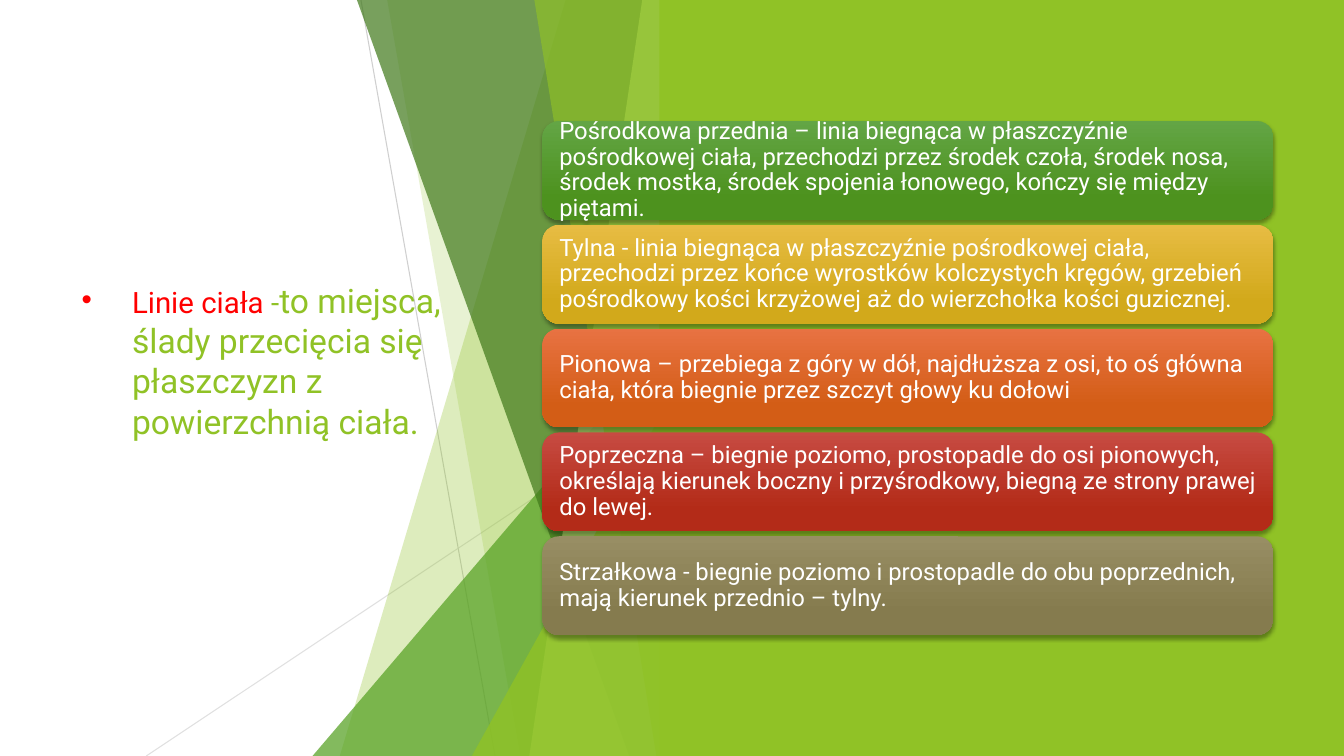
from dataclasses import dataclass

from lxml import etree
from pptx import Presentation
from pptx.dml.color import RGBColor
from pptx.enum.shapes import MSO_CONNECTOR, MSO_SHAPE
from pptx.enum.text import MSO_ANCHOR, MSO_AUTO_SIZE, PP_ALIGN
from pptx.oxml.ns import qn
from pptx.util import Inches, Pt

STRAIGHT = MSO_CONNECTOR.STRAIGHT
RECTANGLE, ROUNDED, TRIANGLE = (
    MSO_SHAPE.RECTANGLE, MSO_SHAPE.ROUNDED_RECTANGLE, MSO_SHAPE.ISOSCELES_TRIANGLE)
MIDDLE, LEFT, NO_FIT = MSO_ANCHOR.MIDDLE, PP_ALIGN.LEFT, MSO_AUTO_SIZE.NONE

WIDTH, HEIGHT = 13.33, 7.5
FACET_EDGE = 6.66
PANEL_LEFT = 6.54
CARD_LEFT, CARD_TOP, CARD_WIDTH, CARD_HEIGHT = 5.38, 1.2, 7.25, 0.98
CARD_PITCH = 1.03
CARD_INSET = 0.12


@dataclass(frozen=True)
class Theme:
    """Colours, font and type sizes of the slide."""
    font: str = "Roboto"
    lime: str = "90C226"
    leaf: str = "54A021"
    forest: str = "3F7819"
    pale: str = "C0E474"
    red: str = "FF0000"
    white: str = "FFFFFF"
    grey: str = "BFBFBF"
    silver: str = "D9D9D9"
    shadow: str = "000000"
    term_size: float = 21
    title_size: float = 24
    card_size: float = 17


THEME = Theme()

TITLE_SPANS = [
    ("Linie ciała", THEME.term_size, THEME.red),
    (" -", THEME.term_size, THEME.lime),
    ("to miejsca, ślady przecięcia się płaszczyzn z powierzchnią ciała.",
     THEME.title_size, THEME.lime),
]

RAYS = [
    ((3.58, 0), (4.91, HEIGHT), THEME.grey, 75),
    ((FACET_EDGE, 4.03), (1.45, HEIGHT), THEME.silver, 80),
]

BACK_FACETS = [(5.61, 3.37, THEME.lime, 30), (3.84, 5.16, THEME.lime, 20)]
FRONT_FACETS = [
    (3.54, 6.24, THEME.forest, 70),
    (6.37, 5.25, THEME.pale, 70),
    (5.3, 6.51, THEME.lime, 65),
]

CARDS = [
    ("Pośrodkowa przednia – linia biegnąca w płaszczyźnie pośrodkowej ciała, "
     "przechodzi przez środek czoła, środek nosa, środek mostka, środek spojenia "
     "łonowego, kończy się między piętami.", "63A545", "4D921E"),
    ("Tylna - linia biegnąca w płaszczyźnie pośrodkowej ciała, przechodzi przez "
     "końce wyrostków kolczystych kręgów, grzebień pośrodkowy kości krzyżowej aż "
     "do wierzchołka kości guzicznej.", "E7BC43", "D2A91B"),
    ("Pionowa – przebiega z góry w dół, najdłuższa z osi, to oś główna ciała, "
     "która biegnie przez szczyt głowy ku dołowi", "E87242", "D35D16"),
    ("Poprzeczna – biegnie poziomo, prostopadle do osi pionowych, określają "
     "kierunek boczny i przyśrodkowy, biegną ze strony prawej do lewej.",
     "C74B42", "B32B18"),
    ("Strzałkowa - biegnie poziomo i prostopadle do obu poprzednich, mają "
     "kierunek przednio – tylny.", "988E64", "857B4E"),
]


def set_alpha(parent, percent):
    """Give the first plain colour under an element its opacity."""
    colour = next(parent.iter(qn("a:srgbClr")))
    etree.SubElement(colour, qn("a:alpha"), val=str(percent * 1000))


def add_span(para, text, size, colour):
    """Add one formatted run to a paragraph."""
    span = para.add_run()
    span.text = text
    span.font.name = THEME.font
    span.font.size = Pt(size)
    span.font.color.rgb = RGBColor.from_string(colour)


def paint(shape, colour, opacity=100):
    """Fill a shape flatly, with neither outline nor shadow."""
    shape.shadow.inherit = False
    shape.line.fill.background()
    shape.fill.solid()
    shape.fill.fore_color.rgb = RGBColor.from_string(colour)
    if opacity < 100:
        set_alpha(shape.fill._xPr, opacity)


def add_title(page):
    """Place the bulleted definition in the title placeholder."""
    box = page.shapes.title
    box.left, box.top, box.width, box.height = map(Inches, (0.71, 1.51, 3.88, 4.48))
    frame = box.text_frame
    frame.word_wrap = True
    frame.auto_size = NO_FIT
    frame.vertical_anchor = MIDDLE
    frame.margin_bottom = Inches(0.4)
    para = frame.paragraphs[0]
    para.alignment = LEFT
    props = para._p.get_or_add_pPr()
    props.set("marL", str(Inches(0.5)))
    props.set("indent", str(-Inches(0.5)))
    etree.SubElement(props, qn("a:buFont"), typeface="Arial")
    etree.SubElement(props, qn("a:buChar"), char="•")
    for text, size, colour in TITLE_SPANS:
        add_span(para, text, size, colour)


def add_ray(page, start, end, colour, opacity):
    """Draw a thin translucent line."""
    ray = page.shapes.add_connector(STRAIGHT, *map(Inches, (*start, *end)))
    ray.line.width = Pt(0.75)
    ray.line.color.rgb = RGBColor.from_string(colour)
    props = ray._element.spPr
    set_alpha(props, opacity)
    etree.SubElement(props, qn("a:effectLst"))


def add_facet(page, top_x, bottom_x, colour, opacity):
    """Draw a full-height facet with a slanted left side."""
    corners = [(FACET_EDGE, 0), (FACET_EDGE, HEIGHT), (bottom_x, HEIGHT)]
    builder = page.shapes.build_freeform(Inches(top_x), 0)
    builder.add_line_segments([(Inches(x), Inches(y)) for x, y in corners])
    paint(builder.convert_to_shape(), colour, opacity)


def add_wedge(page, left, top, colour, opacity):
    """Draw a right-angled triangle standing on the bottom edge."""
    wedge = page.shapes.add_shape(
        TRIANGLE, *map(Inches, (left, top, FACET_EDGE - left, HEIGHT - top)))
    wedge.adjustments[0] = 1
    paint(wedge, colour, opacity)


def add_panel(page):
    """Cover the right side with a plain panel."""
    panel = page.shapes.add_shape(
        RECTANGLE, *map(Inches, (PANEL_LEFT, 0, WIDTH - PANEL_LEFT, HEIGHT)))
    paint(panel, THEME.lime)


def add_soft_shadow(shape):
    """Cast a short shadow downwards."""
    shape.shadow.inherit = False
    effects = shape._element.spPr.find(qn("a:effectLst"))
    shadow = etree.SubElement(
        effects, qn("a:outerShdw"), blurRad=str(Pt(3)), dist=str(Pt(2)),
        dir="5400000", algn="ctr", rotWithShape="0")
    etree.SubElement(shadow, qn("a:srgbClr"), val=THEME.shadow)
    set_alpha(shadow, 35)


def add_card(page, row, text, light, dark):
    """Draw one gradient card with its description."""
    card = page.shapes.add_shape(ROUNDED, *map(Inches, (
        CARD_LEFT, CARD_TOP + row * CARD_PITCH, CARD_WIDTH, CARD_HEIGHT)))
    card.line.fill.background()
    card.fill.gradient()
    card.fill.gradient_angle = 270
    for stop, colour, place in zip(card.fill.gradient_stops, (light, dark), (0, 0.78)):
        stop.color.rgb = RGBColor.from_string(colour)
        stop.position = place
    add_soft_shadow(card)
    frame = card.text_frame
    frame.word_wrap = True
    frame.vertical_anchor = MIDDLE
    frame.margin_left = frame.margin_right = Inches(CARD_INSET)
    frame.margin_top = frame.margin_bottom = Inches(CARD_INSET)
    para = frame.paragraphs[0]
    para.alignment = LEFT
    para.line_spacing = 0.9
    add_span(para, text, THEME.card_size, THEME.white)


def main():
    """Build the slide and save it."""
    deck = Presentation()
    deck.slide_width, deck.slide_height = Inches(WIDTH), Inches(HEIGHT)
    page = deck.slides.add_slide(deck.slide_layouts[5])
    add_title(page)
    for ray in RAYS:
        add_ray(page, *ray)
    for facet in BACK_FACETS:
        add_facet(page, *facet)
    add_wedge(page, 3.1, 3.33, THEME.leaf, 72)
    for facet in FRONT_FACETS:
        add_facet(page, *facet)
    add_wedge(page, 4.68, 3.93, THEME.lime, 80)
    add_panel(page)
    for row, card in enumerate(CARDS):
        add_card(page, row, *card)
    deck.save("out.pptx")


if __name__ == "__main__":
    main()
